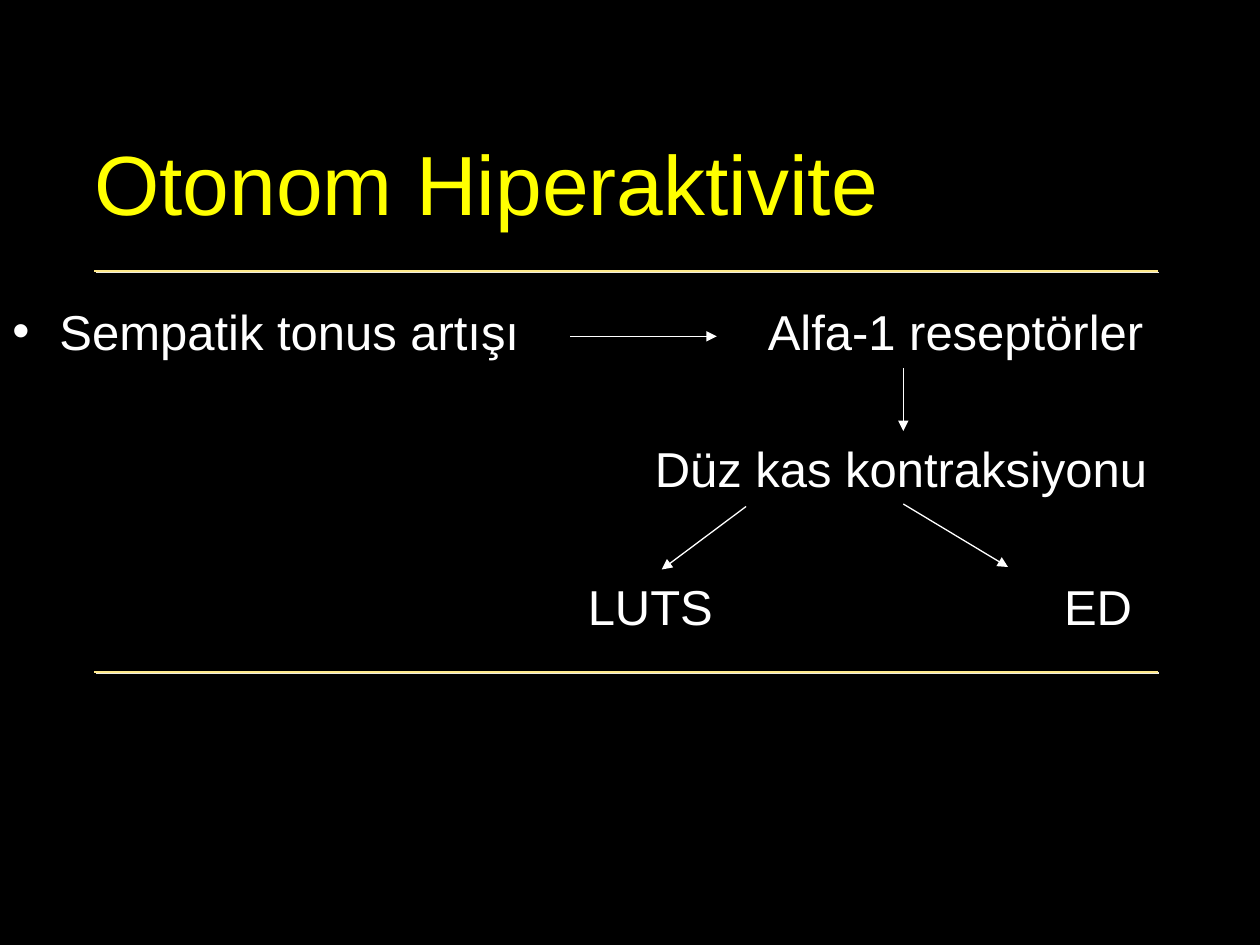
from lxml import etree
from pptx import Presentation
from pptx.dml.color import RGBColor
from pptx.enum.shapes import MSO_CONNECTOR as Connector
from pptx.enum.text import MSO_ANCHOR as Anchor, PP_ALIGN as Align
from pptx.oxml.ns import qn
from pptx.util import Cm, Pt


def rgb(value):
    return RGBColor.from_string(value)


class FlowSlide:
    FONT = "Arial"
    BACKGROUND, TEXT, TITLE = "000000", "FFFFFF", "FFFF00"
    RULE, RULE_SHADOW = "FEE88A", "EEECE1"
    INSET_X, INSET_Y = 0.25, 0.13
    LABEL_HEIGHT = 1.39

    def __init__(self, deck):
        self.slide = deck.slides.add_slide(deck.slide_layouts[5])
        fill = self.slide.background.fill
        fill.solid()
        fill.fore_color.rgb = rgb(self.BACKGROUND)

    def style(self, paragraph, size, color):
        paragraph.alignment = Align.LEFT
        font = paragraph.font
        font.name, font.size = self.FONT, Pt(size)
        font.color.rgb = rgb(color)

    def title(self, text, left, top, width, height):
        title = self.slide.shapes.title
        title.left, title.top = Cm(left), Cm(top)
        title.width, title.height = Cm(width), Cm(height)
        frame = title.text_frame
        frame.text = text
        frame.word_wrap = True
        frame.vertical_anchor = Anchor.MIDDLE
        frame.margin_left = frame.margin_right = frame.margin_bottom = 0
        frame.margin_top = Cm(self.INSET_Y)
        self.style(frame.paragraphs[0], 48, self.TITLE)

    def label(self, text, left, top, width, bullet=False):
        box = self.slide.shapes.add_textbox(
            Cm(left), Cm(top), Cm(width), Cm(self.LABEL_HEIGHT))
        frame = box.text_frame
        frame.word_wrap = True
        frame.margin_left = frame.margin_right = Cm(self.INSET_X)
        frame.margin_top = frame.margin_bottom = Cm(self.INSET_Y)
        paragraph = frame.paragraphs[0]
        paragraph.text = text
        if bullet:
            props = paragraph._p.get_or_add_pPr()
            props.set("marL", str(Cm(0.95)))
            props.set("indent", str(-Cm(0.95)))
            etree.SubElement(props, qn("a:buFont"), typeface=self.FONT)
            etree.SubElement(props, qn("a:buChar"), char="•")
        self.style(paragraph, 28, self.TEXT)

    def line(self, start, end, color, width):
        line = self.slide.shapes.add_connector(
            Connector.STRAIGHT, *(Cm(value) for value in start + end))
        line.line.color.rgb = rgb(color)
        line.line.width = Pt(width)
        effects = etree.SubElement(line._element.spPr, qn("a:effectLst"))
        return line, effects

    def rule(self, y):
        _, effects = self.line((1.9, y), (23.34, y), self.RULE, 1)
        shadow = etree.SubElement(
            effects, qn("a:outerShdw"), dist=str(Pt(1.4)),
            dir=str(45 * 60000), algn="ctr", rotWithShape="0")
        etree.SubElement(shadow, qn("a:srgbClr"), val=self.RULE_SHADOW)

    def arrow(self, start, end):
        arrow, _ = self.line(start, end, self.TEXT, 0.75)
        outline = arrow.line._get_or_add_ln()
        etree.SubElement(outline, qn("a:tailEnd"), type="triangle")


def main():
    deck = Presentation()
    deck.slide_width, deck.slide_height = Cm(25.4), Cm(19.05)
    flow = FlowSlide(deck)

    # Title between the page edge and the upper rule
    for rule_y in (5.46, 13.54):
        flow.rule(rule_y)
    flow.title("Otonom Hiperaktivite", 1.9, 1.47, 21.6, 4.27)

    # Labels on three evenly spaced rows
    cause_row, effect_row, outcome_row = (5.94 + 2.78 * i for i in range(3))
    flow.label("Sempatik tonus artışı", 0, cause_row, 11.2, bullet=True)
    flow.label("Alfa-1 reseptörler", 15.23, cause_row, 8.4)
    flow.label("Düz kas kontraksiyonu", 12.95, effect_row, 10.9)
    flow.label("LUTS", 11.6, outcome_row, 3.5)
    flow.label("ED", 21.2, outcome_row, 2.4)

    # Arrows from cause to outcomes
    receptor_x = 18.21
    flow.arrow((11.5, 6.78), (14.45, 6.78))
    flow.arrow((receptor_x, 7.42), (receptor_x, 8.69))
    flow.arrow((15.04, 10.21), (13.34, 11.48))
    flow.arrow((receptor_x, 10.16), (20.32, 11.43))

    deck.save("out.pptx")


if __name__ == "__main__":
    main()
